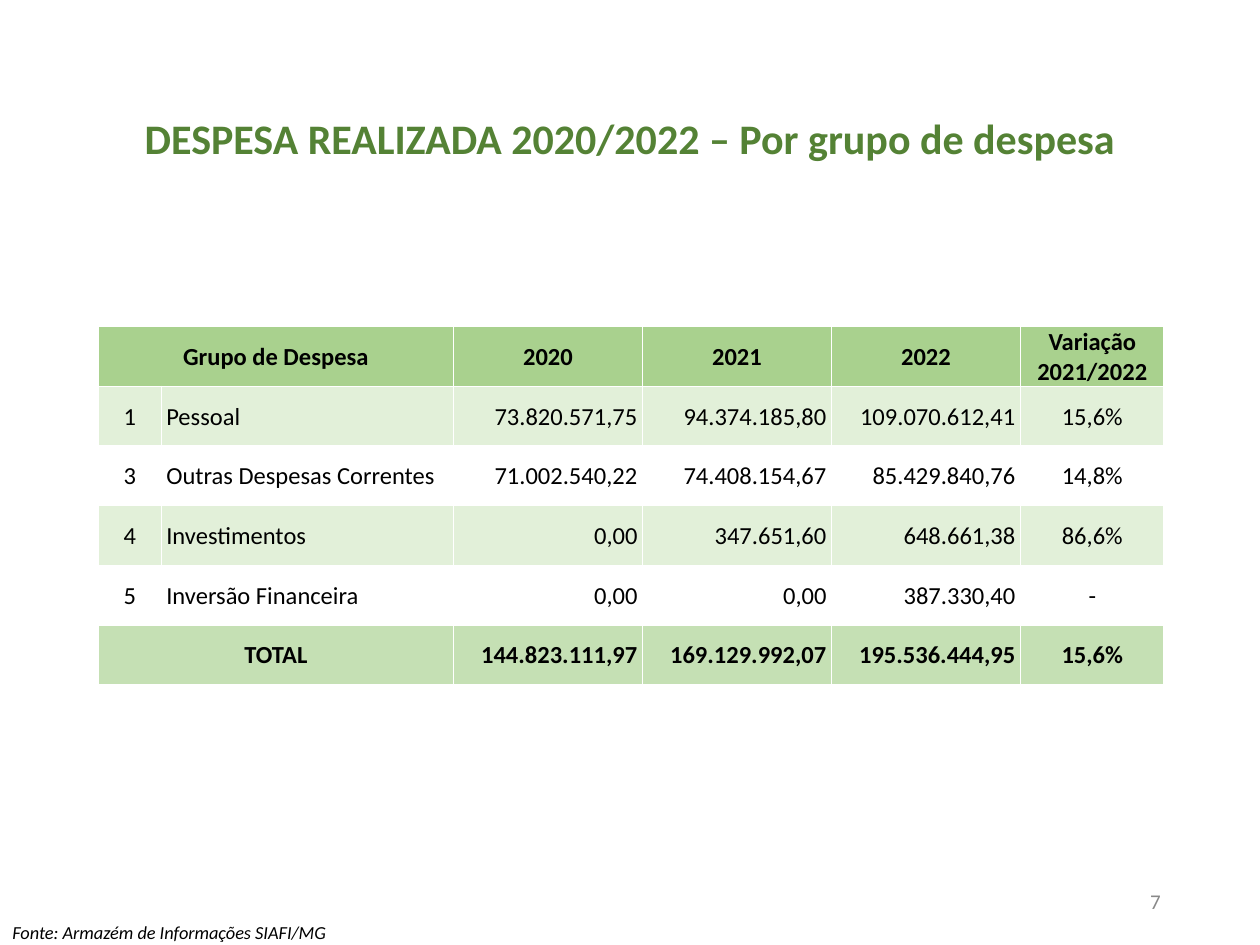
from lxml import etree
from pptx import Presentation
from pptx.dml.color import RGBColor
from pptx.enum.text import MSO_ANCHOR as Anchor, MSO_AUTO_SIZE as AutoSize, PP_ALIGN as Align
from pptx.oxml.ns import qn
from pptx.util import Inches, Pt

HEADER_FILL, TOTAL_FILL = "A9D18E", "C5E0B4"
BAND_FILLS = ("E2F0D9", "FFFFFF")
COLUMN_WIDTHS = (0.5, 2.32, 1.5, 1.5, 1.5, 1.14)
COLUMN_ALIGNS = (Align.CENTER, Align.LEFT, Align.RIGHT, Align.RIGHT, Align.RIGHT, Align.CENTER)
EXPENSES = (
    ("Grupo de Despesa", "", "2020", "2021", "2022", "Variação\n2021/2022"),
    ("1", "Pessoal", "73.820.571,75", "94.374.185,80", "109.070.612,41", "15,6%"),
    ("3", "Outras Despesas Correntes", "71.002.540,22", "74.408.154,67", "85.429.840,76", "14,8%"),
    ("4", "Investimentos", "0,00", "347.651,60", "648.661,38", "86,6%"),
    ("5", "Inversão Financeira", "0,00", "0,00", "387.330,40", "-"),
    ("TOTAL", "", "144.823.111,97", "169.129.992,07", "195.536.444,95", "15,6%"),
)


def rgb(value):
    return RGBColor.from_string(value)


def write(frame, text, size, color="000000", align=Align.LEFT, bold=False, italic=False):
    frame.text = text
    for paragraph in frame.paragraphs:
        paragraph.alignment = align
        font = paragraph.font
        font.name, font.size = "Calibri", Pt(size)
        font.bold, font.italic = bold, italic
        font.color.rgb = rgb(color)


def add_title(slide, left, top, width, height):
    title = slide.shapes.title
    title.left, title.top = Inches(left), Inches(top)
    title.width, title.height = Inches(width), Inches(height)
    frame = title.text_frame
    write(frame, "DESPESA REALIZADA 2020/2022 – Por grupo de despesa", 24, "548235",
          Align.CENTER, bold=True)
    frame.paragraphs[0].line_spacing = 0.9
    frame.vertical_anchor = Anchor.MIDDLE
    frame.auto_size = AutoSize.NONE


def add_note(slide, text, left, top, width, height, size, **style):
    note = slide.shapes.add_textbox(Inches(left), Inches(top), Inches(width), Inches(height))
    frame = note.text_frame
    frame.word_wrap = True
    frame.vertical_anchor = Anchor.MIDDLE
    write(frame, text, size, **style)


def set_borders(cell, color="FFFFFF", width=1):
    properties = cell._tc.get_or_add_tcPr()
    for index, side in enumerate(("lnL", "lnR", "lnT", "lnB")):
        line = etree.Element(qn(f"a:{side}"), w=str(Pt(width)))
        fill = etree.SubElement(line, qn("a:solidFill"))
        etree.SubElement(fill, qn("a:srgbClr"), val=color)
        properties.insert(index, line)


def format_cell(cell, text, fill, align, bold):
    write(cell.text_frame, text, 14, align=align, bold=bold)
    cell.vertical_anchor = Anchor.MIDDLE
    cell.margin_left = Inches(0.04 if align == Align.LEFT else 0.01)
    cell.margin_right = Inches(0.04 if align == Align.RIGHT else 0.01)
    cell.margin_top, cell.margin_bottom = Inches(0.01), 0
    cell.fill.solid()
    cell.fill.fore_color.rgb = rgb(fill)
    set_borders(cell)


def add_expense_table(slide, left, top, width, height):
    last = len(EXPENSES) - 1
    table = slide.shapes.add_table(len(EXPENSES), len(COLUMN_WIDTHS), Inches(left), Inches(top),
                                   Inches(width), Inches(height)).table
    for column, share in zip(table.columns, COLUMN_WIDTHS):
        column.width = Inches(width * share / sum(COLUMN_WIDTHS))
    for r, values in enumerate(EXPENSES):
        is_outer = r in (0, last)
        fill = {0: HEADER_FILL, last: TOTAL_FILL}.get(r, BAND_FILLS[(r - 1) % 2])
        for c, text in enumerate(values):
            align = Align.CENTER if r == 0 else COLUMN_ALIGNS[c]
            format_cell(table.cell(r, c), text, fill, align, bold=is_outer)
        if is_outer:
            table.cell(r, 0).merge(table.cell(r, 1))


def main():
    deck = Presentation()
    deck.slide_width, deck.slide_height = Inches(10), Inches(7.5)
    slide = deck.slides.add_slide(deck.slide_layouts[5])
    add_note(slide, "7", 7.06, 6.95, 2.25, 0.4, 12, color="898989", align=Align.RIGHT)
    add_expense_table(slide, 0.78, 2.59, 8.46, 2.84)
    add_title(slide, 0.5, 0.72, 9, 0.79)
    add_note(slide, "Fonte: Armazém de Informações SIAFI/MG", 0, 7.3, 7.95, 0.2, 10.5, italic=True)
    deck.save("out.pptx")


if __name__ == "__main__":
    main()
